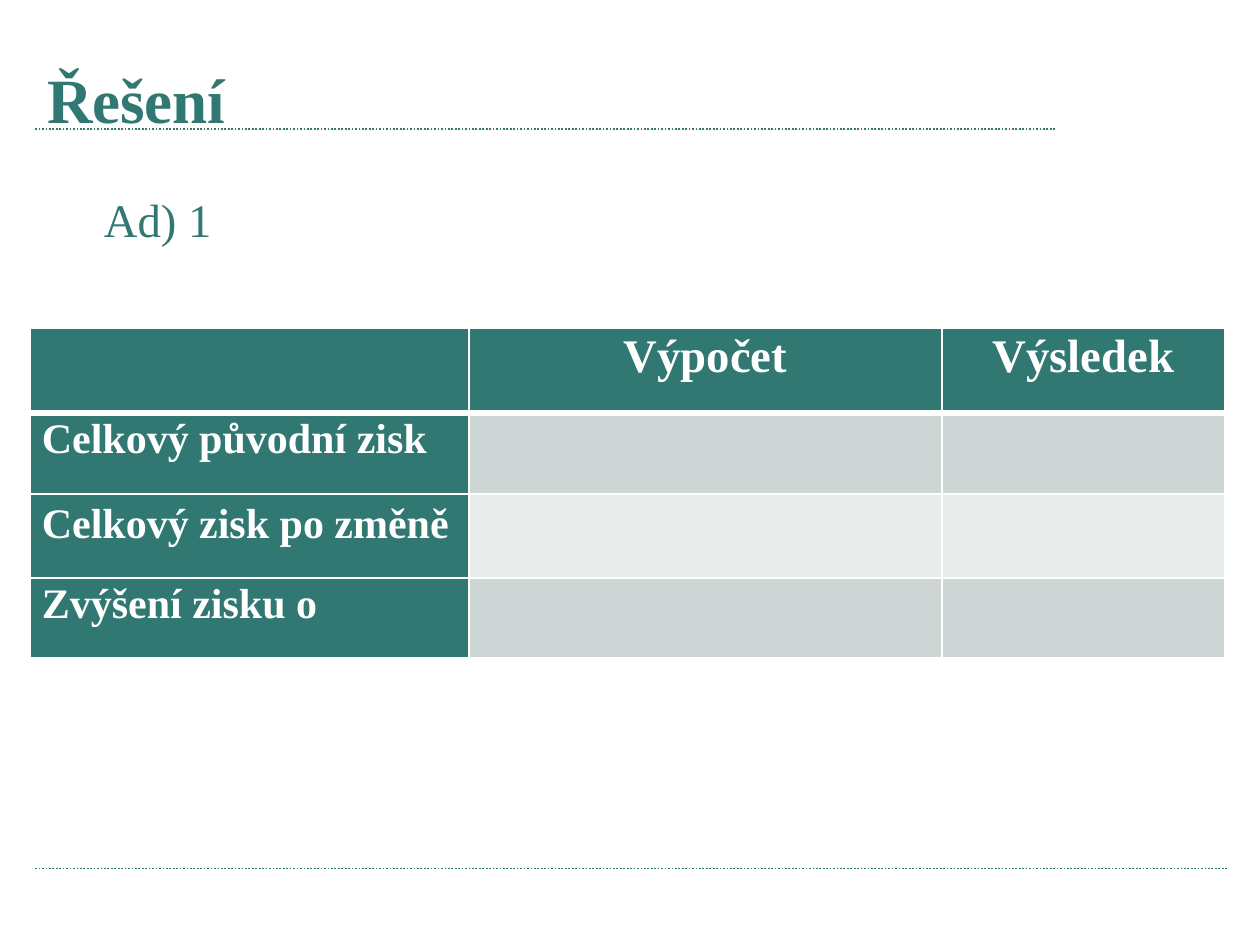
from dataclasses import dataclass

from lxml.etree import SubElement
from pptx import Presentation
from pptx.dml.color import RGBColor
from pptx.enum.dml import MSO_LINE
from pptx.enum.shapes import MSO_CONNECTOR
from pptx.enum.text import MSO_ANCHOR, PP_ALIGN
from pptx.oxml.ns import qn
from pptx.util import Inches, Pt

FONT = "Times New Roman"
COLORS = {"teal": "307871", "white": "FFFFFF", "band": "CDD6D5", "light": "E8ECEB"}


@dataclass
class Rule:
    right: float
    top: float


@dataclass
class Row:
    height: float
    texts: tuple
    fill: str
    size: int = 18
    spacing: float = 1.07
    top_border: int = 1
    bottom_border: int = 1
    align: PP_ALIGN = PP_ALIGN.LEFT


RULES = [Rule(6.29, 0.77), Rule(7.31, 5.17)]
COLUMN_WIDTHS = [2.61, 2.82, 1.68]
ROWS = [
    Row(0.51, ("", "Výpočet", "Výsledek"), "teal", size=20, bottom_border=3,
        align=PP_ALIGN.CENTER),
    Row(0.48, ("Celkový původní zisk", "", ""), "band", top_border=3),
    Row(0.5, ("Celkový zisk po změně", "", ""), "light", spacing=1.15),
    Row(0.48, ("Zvýšení zisku o", "", ""), "band"),
]


def color(name: str) -> RGBColor:
    return RGBColor.from_string(COLORS[name])


def add_span(para, text: str, size: int, color_name: str, bold: bool = False) -> None:
    span = para.add_run()
    span.text = text
    span.font.name = FONT
    span.font.size = Pt(size)
    span.font.bold = bold
    span.font.color.rgb = color(color_name)


def add_rule(page, rule: Rule) -> None:
    line = page.shapes.add_connector(
        MSO_CONNECTOR.STRAIGHT, Inches(0.21), Inches(rule.top),
        Inches(rule.right), Inches(rule.top))
    line.line.color.rgb = color("teal")
    line.line.width = Pt(0.75)
    line.line.dash_style = MSO_LINE.ROUND_DOT
    SubElement(line._element.spPr, qn("a:effectLst"))


def set_borders(cell, row: Row) -> None:
    properties = cell._tc.get_or_add_tcPr()
    widths = {"lnL": 1, "lnR": 1, "lnT": row.top_border, "lnB": row.bottom_border}
    for side, width in widths.items():
        border = SubElement(properties, qn(f"a:{side}"), w=str(Pt(width)))
        fill = SubElement(border, qn("a:solidFill"))
        SubElement(fill, qn("a:srgbClr"), val=COLORS["white"])


def fill_cell(cell, text: str, row: Row, fill_name: str) -> None:
    # Borders come before the fill in the cell properties
    set_borders(cell, row)
    cell.fill.solid()
    cell.fill.fore_color.rgb = color(fill_name)
    if text:
        cell.margin_left = cell.margin_right = Inches(0.07)
        cell.margin_top = cell.margin_bottom = 0
        para = cell.text_frame.paragraphs[0]
        para.alignment = row.align
        para.line_spacing = row.spacing
        add_span(para, text, row.size, "white", bold=True)


def add_profit_table(page) -> None:
    table = page.shapes.add_table(
        len(ROWS), len(COLUMN_WIDTHS), Inches(0.18), Inches(1.95),
        Inches(sum(COLUMN_WIDTHS)), Inches(sum(row.height for row in ROWS))).table
    for column, width in zip(table.columns, COLUMN_WIDTHS):
        column.width = Inches(width)
    for row_index, row in enumerate(ROWS):
        table.rows[row_index].height = Inches(row.height)
        for column_index, text in enumerate(row.texts):
            fill_name = row.fill if column_index else "teal"
            fill_cell(table.cell(row_index, column_index), text, row, fill_name)


def main() -> None:
    # Slide in 4:3 format
    deck = Presentation()
    deck.slide_width = Inches(7.5)
    deck.slide_height = Inches(7.5 * 3 / 4)
    page = deck.slides.add_slide(deck.slide_layouts[5])

    # Dotted rules under the title and above the footer
    for rule in RULES:
        add_rule(page, rule)

    # Title
    title = page.shapes.title
    title.left, title.top = Inches(0.18), Inches(0.29)
    title.width, title.height = Inches(6.61), Inches(0.59)
    title.text_frame.vertical_anchor = MSO_ANCHOR.MIDDLE
    para = title.text_frame.paragraphs[0]
    para.alignment = PP_ALIGN.LEFT
    add_span(para, "Řešení", 27, "teal", bold=True)

    # Results table
    add_profit_table(page)

    # Task label
    box = page.shapes.add_textbox(Inches(0.52), Inches(1.08), Inches(1.1), Inches(0.44))
    box.text_frame.word_wrap = True
    box.text_frame.vertical_anchor = MSO_ANCHOR.MIDDLE
    add_span(box.text_frame.paragraphs[0], "Ad) 1", 20, "teal")

    deck.save("out.pptx")


if __name__ == "__main__":
    main()
